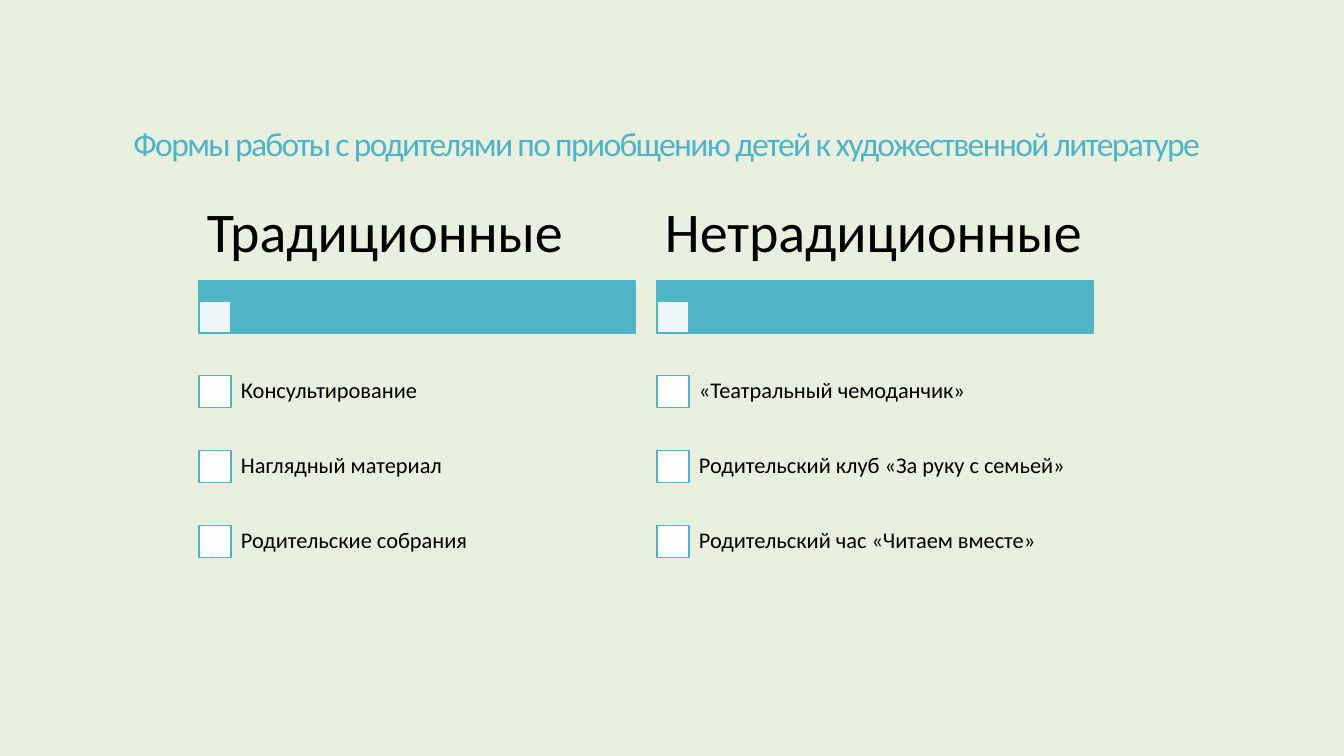
"""Build a slide comparing traditional and non-traditional forms of work with parents."""
import pptx
import pptx.dml.color
import pptx.enum.shapes
import pptx.enum.text
import pptx.oxml
import pptx.oxml.ns
import pptx.util

TITLE = "Формы работы с родителями по приобщению детей к художественной литературе"
COLUMNS = [
    ("Традиционные", ["Консультирование", "Наглядный материал", "Родительские собрания"]),
    ("Нетрадиционные", [
        "«Театральный чемоданчик»",
        "Родительский клуб «За руку с семьей»",
        "Родительский час «Читаем вместе»",
    ]),
]

BACKGROUND = pptx.dml.color.RGBColor(0xEA, 0xF0, 0xE0)
TEAL = pptx.dml.color.RGBColor(0x50, 0xB4, 0xC8)
WHITE = pptx.dml.color.RGBColor(0xFF, 0xFF, 0xFF)
BLACK = pptx.dml.color.RGBColor(0x00, 0x00, 0x00)

PX = 914400 / 100.8
COLUMN_LEFT, COLUMN_STEP, COLUMN_WIDTH = 199, 458, 436
HEADING_TOP, HEADING_HEIGHT = 188, 93
BAR_TOP, BAR_HEIGHT = 281, 52
ROW_TOP, ROW_STEP = 354, 75
CHECK = 32
TEXT_INDENT = 30
CENTER = pptx.enum.text.PP_ALIGN.CENTER
LEFT = pptx.enum.text.PP_ALIGN.LEFT


def emu(*lengths):
    return [pptx.util.Emu(round(length * PX)) for length in lengths]


def add_text(page, place, text, size, insets, color=BLACK, align=LEFT, leading=0.9):
    box = page.shapes.add_textbox(*emu(*place))
    across, down = emu(*insets)
    frame_format = {
        "word_wrap": True,
        "vertical_anchor": pptx.enum.text.MSO_ANCHOR.MIDDLE,
        "margin_left": across, "margin_right": across,
        "margin_top": down, "margin_bottom": down,
    }
    for name, value in frame_format.items():
        setattr(box.text_frame, name, value)
    para = box.text_frame.paragraphs[0]
    para.alignment, para.line_spacing = align, leading
    span = para.add_run()
    span.text = text
    for name, value in {"name": "Calibri", "size": pptx.util.Pt(size)}.items():
        setattr(span.font, name, value)
    span.font.color.rgb = color
    return span


def add_rectangle(page, place, color, opacity=100):
    box = page.shapes.add_shape(pptx.enum.shapes.MSO_SHAPE.RECTANGLE, *emu(*place))
    box.shadow.inherit = False
    box.fill.solid()
    box.fill.fore_color.rgb = color
    box.line.color.rgb = TEAL
    box.line.width = pptx.util.Pt(1)
    if opacity < 100:
        tint = box.fill._xPr.find(".//" + pptx.oxml.ns.qn("a:srgbClr"))
        alpha = pptx.oxml.parse_xml(
            f'<a:alpha {pptx.oxml.ns.nsdecls("a")} val="{opacity * 1000}"/>')
        tint.append(alpha)


def add_column(page, left, heading, items):
    add_rectangle(page, (left, BAR_TOP, COLUMN_WIDTH, BAR_HEIGHT), TEAL)
    add_rectangle(page, (left, BAR_TOP + BAR_HEIGHT - CHECK, CHECK, CHECK), WHITE, 90)
    add_text(page, (left, HEADING_TOP, COLUMN_WIDTH, HEADING_HEIGHT), heading, 40, (8, 6))
    for row, item in enumerate(items):
        top = ROW_TOP + row * ROW_STEP
        add_rectangle(page, (left, top + (ROW_STEP - CHECK) / 2, CHECK, CHECK), WHITE)
        place = (left + TEXT_INDENT, top, COLUMN_WIDTH - TEXT_INDENT, ROW_STEP)
        add_text(page, place, item, 16, (12, 12))


def main():
    deck = pptx.Presentation()
    deck.slide_width, deck.slide_height = emu(1344, 756)
    page = deck.slides.add_slide(deck.slide_layouts[6])
    page.background.fill.solid()
    page.background.fill.fore_color.rgb = BACKGROUND
    title = add_text(page, (73, 55, 1187, 182), TITLE, 24, (10, 5), TEAL, CENTER, 0.85)
    title._r.get_or_add_rPr().set("spc", "-120")
    for index, (heading, items) in enumerate(COLUMNS):
        add_column(page, COLUMN_LEFT + index * COLUMN_STEP, heading, items)
    deck.save("out.pptx")


if __name__ == "__main__":
    main()
